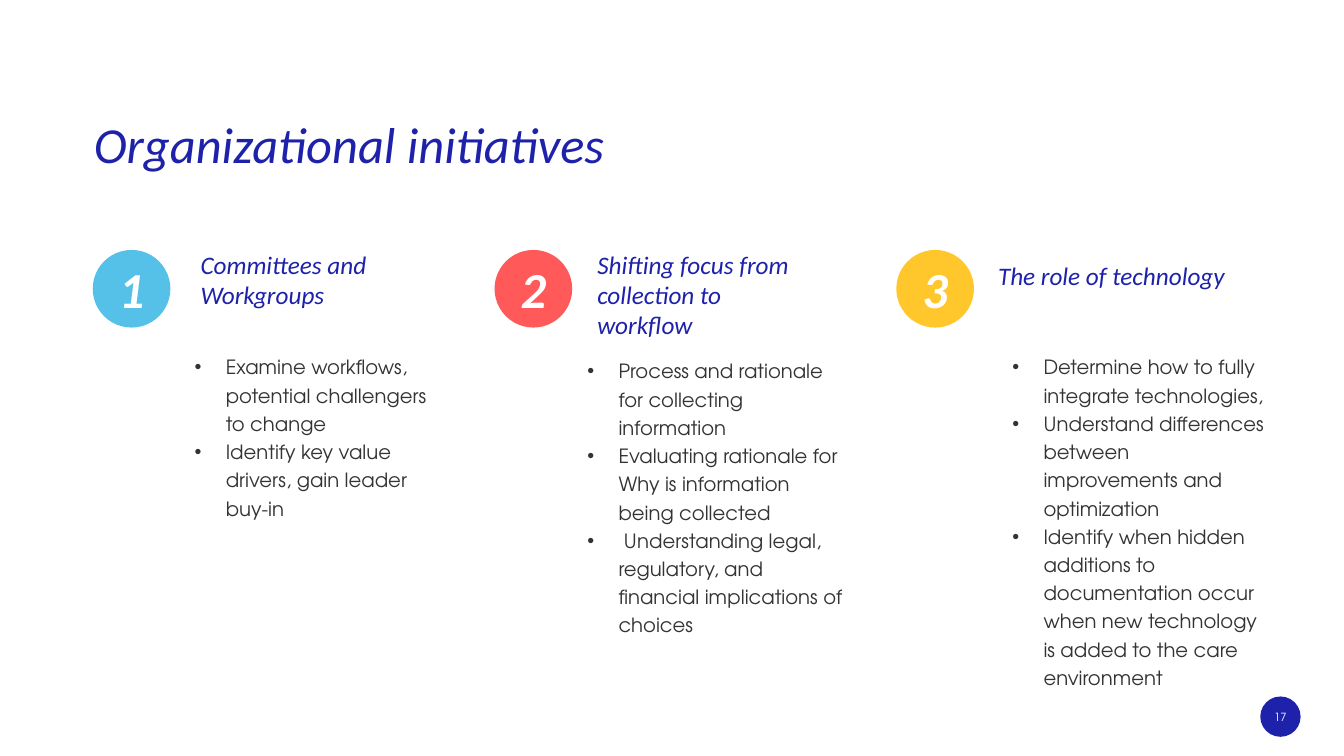
import pptx
import pptx.util
import pptx.dml.color
import pptx.enum.shapes
import pptx.enum.text
import pptx.oxml.ns
import lxml.etree

# Content
TITLE = "Organizational initiatives"
PAGE_NUMBER = "17"
# Offsets are inches from the left edge of each column
INITIATIVES = [
    dict(color="55C1E9", heading="Committees and Workgroups",
         heading_box=(0.97, 2.42, 2.28, 0.71), heading_spacing=1.0,
         list_box=(1.01, 3.43, 2.54, 1.77),
         points=["Examine workflows, potential challengers to change",
                 "Identify key value drivers, gain leader buy-in"]),
    dict(color="FF5959", heading="Shifting focus from collection to workflow",
         heading_box=(0.92, 2.42, 2.28, 1.01), heading_spacing=1.0,
         list_box=(0.92, 3.47, 2.54, 2.9),
         points=["Process and rationale for collecting information",
                 "Evaluating rationale for Why is information being collected",
                 " Understanding legal, regulatory, and financial implications of choices"]),
    dict(color="FFC72C", heading="The role of technology",
         heading_box=(0.91, 2.38, 2.78, 0.5), heading_spacing=1.5,
         list_box=(1.15, 3.43, 2.54, 3.47),
         points=["Determine how to fully integrate technologies,",
                 "Understand differences between improvements and optimization",
                 "Identify when hidden additions to documentation occur when new "
                 "technology is added to the care environment"]),
]

# Style and grid
NAVY, GREY, WHITE = "1E22AA", "333333", "FFFFFF"
HEADING_FONT, BODY_FONT = "Calibri", "TeX Gyre Adventor"
COLUMN_LEFT, COLUMN_STEP = 0.92, 3.985
CIRCLE_TOP, CIRCLE_SIZE = 2.48, 0.77
BULLET_INDENT = 0.31
DEFAULT_INSETS = (0.1, 0.05, 0.1, 0.05)
CENTER = pptx.enum.text.PP_ALIGN.CENTER
MIDDLE = pptx.enum.text.MSO_ANCHOR.MIDDLE
TOP = pptx.enum.text.MSO_ANCHOR.TOP


def rgb(color):
    return pptx.dml.color.RGBColor.from_string(color)


def inches(values):
    return [pptx.util.Inches(value) for value in values]


def add_bullet(paragraph):
    properties = paragraph._p.get_or_add_pPr()
    indent = pptx.util.Inches(BULLET_INDENT)
    properties.set("marL", str(indent))
    properties.set("indent", str(-indent))
    for tag, name, value in (("a:buFont", "typeface", "Arial"), ("a:buChar", "char", "•")):
        element = lxml.etree.SubElement(properties, pptx.oxml.ns.qn(tag))
        element.set(name, value)


def write_text(shape, paragraphs, *, size, color, font=HEADING_FONT, bold=False,
               italic=False, align=None, anchor=TOP, spacing=None,
               insets=DEFAULT_INSETS, bullets=False):
    frame = shape.text_frame
    frame.word_wrap = True
    frame.vertical_anchor = anchor
    (frame.margin_left, frame.margin_top,
     frame.margin_right, frame.margin_bottom) = inches(insets)
    for index, text in enumerate(paragraphs):
        paragraph = frame.add_paragraph() if index else frame.paragraphs[0]
        if spacing:
            paragraph.line_spacing = spacing
        if bullets:
            add_bullet(paragraph)
        paragraph.alignment = align
        run = paragraph.add_run()
        run.text = text
        run.font.name = font
        run.font.size = pptx.util.Pt(size)
        run.font.bold = bold
        run.font.italic = italic
        run.font.color.rgb = rgb(color)


def add_text(slide, box, paragraphs, **text_format):
    shape = slide.shapes.add_textbox(*inches(box))
    write_text(shape, paragraphs, **text_format)


def add_circle(slide, left, top, size, color):
    circle = slide.shapes.add_shape(pptx.enum.shapes.MSO_SHAPE.OVAL,
                                    *inches((left, top, size, size)))
    circle.shadow.inherit = False
    circle.fill.solid()
    circle.fill.fore_color.rgb = rgb(color)
    circle.line.fill.background()
    return circle


def main():
    presentation = pptx.Presentation()
    presentation.slide_width, presentation.slide_height = inches((13.33, 7.5))
    slide = presentation.slides.add_slide(presentation.slide_layouts[6])

    # Title
    add_text(slide, (0.93, 1.26, 10.75, 1.12), [TITLE], size=36, color=NAVY,
             italic=True, spacing=0.75, insets=(0, 0, 0, 0))

    # Page number badge
    add_circle(slide, 12.5, 6.91, 0.4, NAVY)
    add_text(slide, (12.42, 6.99, 0.56, 0.25), [PAGE_NUMBER], size=8, color=WHITE,
             font=BODY_FONT, align=CENTER, anchor=MIDDLE, insets=(0, 0, 0, 0))

    # One column per initiative: numbered circle, heading, bullet list
    for index, initiative in enumerate(INITIATIVES):
        left = COLUMN_LEFT + index * COLUMN_STEP
        circle = add_circle(slide, left, CIRCLE_TOP, CIRCLE_SIZE, initiative["color"])
        write_text(circle, [str(index + 1)], size=36, color=WHITE, bold=True,
                   italic=True, align=CENTER, anchor=MIDDLE)
        offset, *rest = initiative["heading_box"]
        add_text(slide, (left + offset, *rest), [initiative["heading"]], size=18,
                 color=NAVY, italic=True, spacing=initiative["heading_spacing"])
        offset, *rest = initiative["list_box"]
        add_text(slide, (left + offset, *rest), initiative["points"], size=14,
                 color=GREY, font=BODY_FONT, spacing=1.2,
                 insets=(0, 0.05, 0, 0.05), bullets=True)

    presentation.save("out.pptx")


if __name__ == "__main__":
    main()
